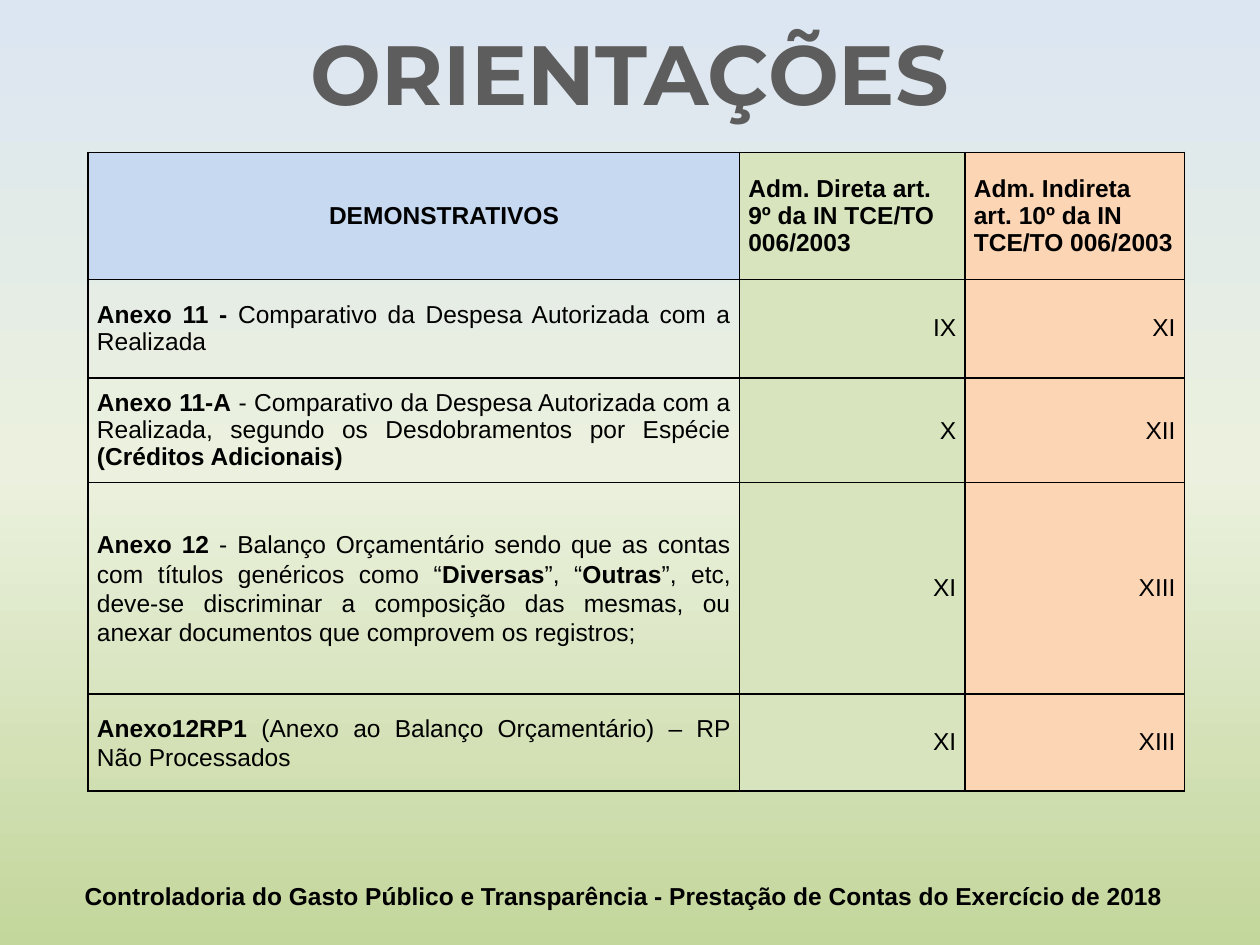
from dataclasses import dataclass
from typing import Optional

from lxml import etree
from pptx import Presentation
from pptx import util as u
from pptx.dml.color import RGBColor
from pptx.enum import text
from pptx.oxml import ns

AL = text.PP_ALIGN


@dataclass(frozen=True)
class Theme:
    font: str = "Arial"
    title_font: str = "Montserrat"
    body_size: int = 14
    title_size: int = 48
    ink: str = "000000"
    title: str = "5D5D5D"
    header: str = "C6D9F1"
    direct: str = "D7E4BD"
    indirect: str = "FCD5B5"
    backdrop: tuple = ((0, "DCE6F2"), (50, "EBF1DE"), (100, "C3D69B"))
    border: float = 1


@dataclass(frozen=True)
class Entry:
    statement: str
    direct: str
    indirect: str
    height: float
    spacing: float = 0.98
    number_indent: float = 0.48
    number_spacing: float = 0.98


T = Theme()
COLUMNS = (5.17, 1.79, 1.74)
HEADER_HEIGHT = 1.01
ENTRIES = (
    Entry("**Anexo 11 - **Comparativo da Despesa Autorizada com a Realizada",
          "IX", "XI", 0.78),
    Entry("**Anexo 11-A** - Comparativo da Despesa Autorizada com a Realizada, "
          "segundo os Desdobramentos por Espécie **(Créditos Adicionais)**",
          "X", "XII", 0.83, 0.98, 0.15, 1.07),
    Entry("**Anexo 12** - Balanço Orçamentário sendo que as contas com títulos "
          "genéricos como “**Diversas**”, “**Outras**”, etc, deve-se discriminar a "
          "composição das mesmas, ou anexar documentos que comprovem os registros;",
          "XI", "XIII", 1.68, 1.07),
    Entry("**Anexo12RP1** (Anexo ao Balanço Orçamentário) – RP Não Processados",
          "XI", "XIII", 0.77, 1.07),
)


def apply(obj, formats: dict) -> None:
    for name, value in formats.items():
        setattr(obj, name, value)


def add_runs(p, marked: str, font: str = T.font, size: int = T.body_size,
             color: str = T.ink) -> None:
    for i, part in enumerate(marked.split("**")):
        if part:
            r = p.add_run()
            r.text = part
            apply(r.font, {"name": font, "size": u.Pt(size), "bold": i % 2 == 1})
            r.font.color.rgb = RGBColor.from_string(color)


def add_label(s, box: tuple, marked: str, align, **style) -> None:
    sp = s.shapes.add_textbox(*map(u.Inches, box))
    tf = sp.text_frame
    apply(tf, {"word_wrap": True, "auto_size": text.MSO_AUTO_SIZE.SHAPE_TO_FIT_TEXT})
    p = tf.paragraphs[0]
    p.alignment = align
    add_runs(p, marked, **style)


def draw_borders(cell) -> None:
    tc_pr = cell._tc.get_or_add_tcPr()
    for i, side in enumerate(("lnL", "lnR", "lnT", "lnB")):
        ln = etree.Element(ns.qn(f"a:{side}"), w=str(u.Pt(T.border)))
        fill = etree.SubElement(ln, ns.qn("a:solidFill"))
        etree.SubElement(fill, ns.qn("a:srgbClr"), val=T.ink)
        tc_pr.insert(i, ln)


def fill_cell(cell, lines: tuple, align, fill: Optional[str] = None,
              spacing: float = 0.98, indent: float = 0) -> None:
    apply(cell, {"margin_left": u.Inches(0.07), "margin_right": u.Inches(0.07),
                 "margin_top": 0, "margin_bottom": 0,
                 "vertical_anchor": text.MSO_ANCHOR.MIDDLE})
    if fill:
        cell.fill.solid()
        cell.fill.fore_color.rgb = RGBColor.from_string(fill)
    else:
        cell.fill.background()
    draw_borders(cell)
    tf = cell.text_frame
    for i, line in enumerate(lines):
        p = tf.add_paragraph() if i else tf.paragraphs[0]
        apply(p, {"alignment": align, "line_spacing": spacing})
        if indent:
            p._p.get_or_add_pPr().set("indent", str(u.Inches(indent)))
        add_runs(p, line)


def add_statements(s) -> None:
    heights = (HEADER_HEIGHT, *(e.height for e in ENTRIES))
    table = s.shapes.add_table(
        len(heights), len(COLUMNS), u.Inches(0.7), u.Inches(1.21),
        u.Inches(sum(COLUMNS)), u.Inches(sum(heights))).table
    apply(table, {"first_row": False, "horz_banding": False})
    for column, width in zip(table.columns, COLUMNS):
        column.width = u.Inches(width)
    for row, height in zip(table.rows, heights):
        row.height = u.Inches(height)

    fill_cell(table.cell(0, 0), ("**DEMONSTRATIVOS**",), AL.CENTER, T.header, indent=0.48)
    fill_cell(table.cell(0, 1), ("**Adm. Direta art. 9º da IN TCE/TO 006/2003**",),
              AL.LEFT, T.direct)
    fill_cell(table.cell(0, 2), ("**Adm. Indireta art. 10º da IN**", "**TCE/TO 006/2003**"),
              AL.LEFT, T.indirect)
    for i, e in enumerate(ENTRIES, 1):
        fill_cell(table.cell(i, 0), (e.statement,), AL.JUSTIFY, spacing=e.spacing)
        numbers = ((e.direct, T.direct), (e.indirect, T.indirect))
        for j, (number, fill) in enumerate(numbers, 1):
            fill_cell(table.cell(i, j), (number,), AL.RIGHT, fill,
                      e.number_spacing, e.number_indent)


def paint_background(s) -> None:
    fill = s.background.fill
    fill.gradient()
    grad = s._element.find(".//" + ns.qn("a:gradFill"))
    stops = grad.find(ns.qn("a:gsLst"))
    for stop in list(stops):
        stops.remove(stop)
    for position, color in T.backdrop:
        stop = etree.SubElement(stops, ns.qn("a:gs"), pos=str(position * 1000))
        etree.SubElement(stop, ns.qn("a:srgbClr"), val=color)
    grad.find(ns.qn("a:lin")).set("ang", str(90 * 60000))


def main() -> None:
    prs = Presentation()
    apply(prs, {"slide_width": u.Inches(10), "slide_height": u.Inches(7.5)})
    s = prs.slides.add_slide(prs.slide_layouts[6])
    paint_background(s)
    add_label(s, (0.55, 6.94, 8.78, 0.34),
              "**Controladoria do Gasto Público e Transparência - "
              "Prestação de Contas do Exercício de 2018**", AL.RIGHT)
    add_statements(s)
    add_label(s, (0.06, 0.12, 9.88, 0.91), "**ORIENTAÇÕES**", AL.CENTER,
              font=T.title_font, size=T.title_size, color=T.title)
    prs.save("out.pptx")


if __name__ == "__main__":
    main()
